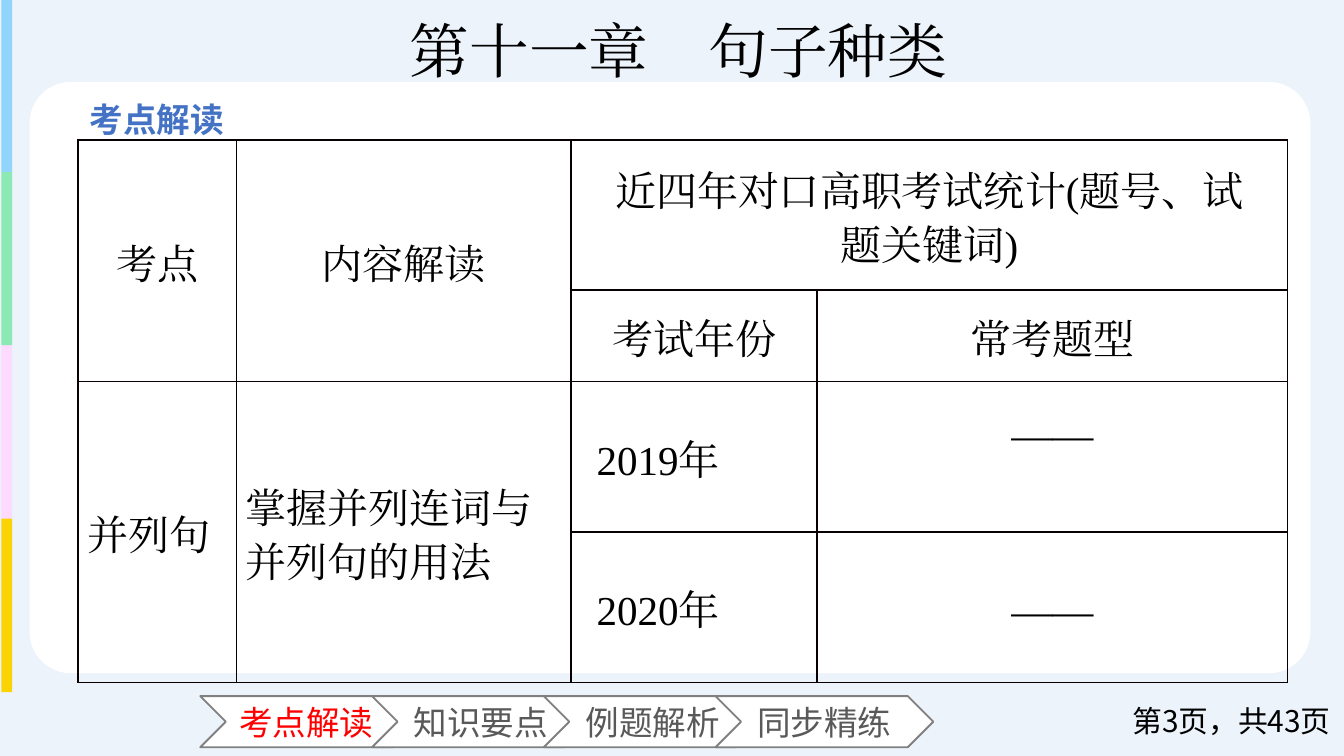
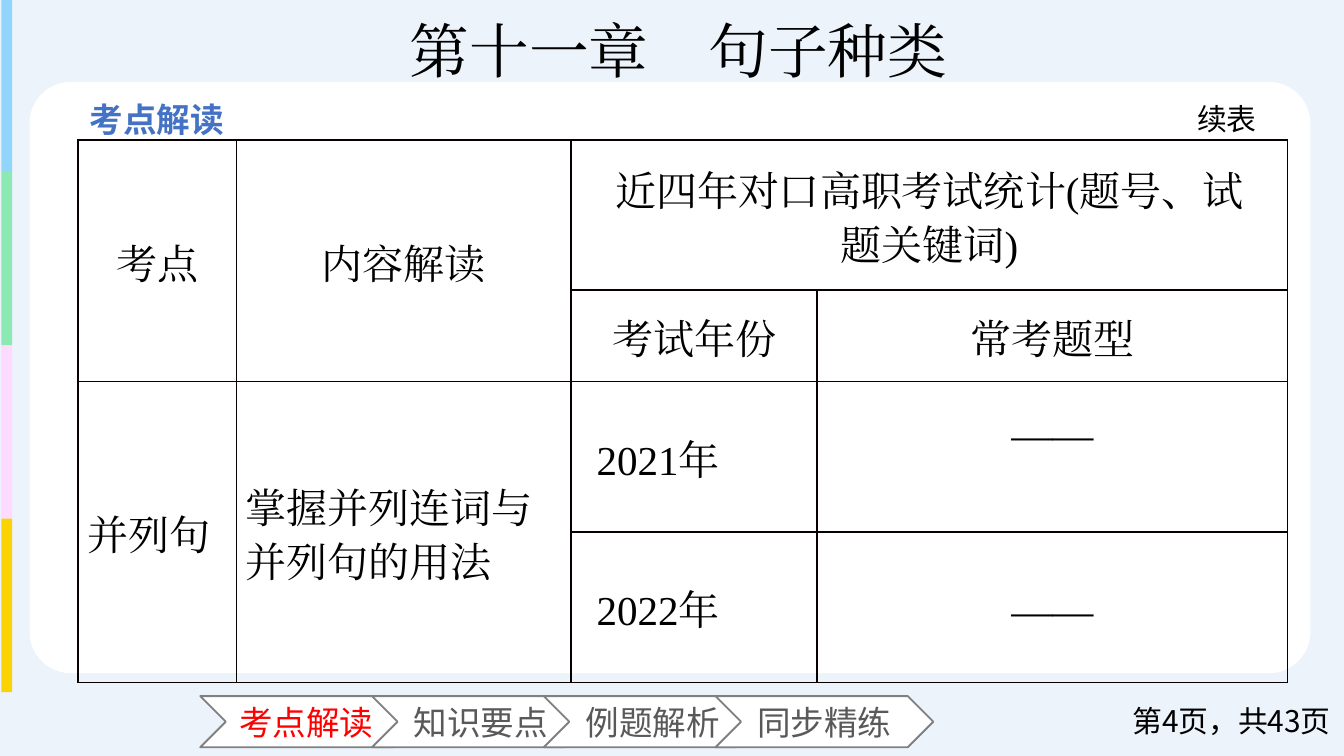
from lxml.etree import SubElement
from pptx import Presentation
from pptx.dml.color import RGBColor
from pptx.enum.shapes import MSO_SHAPE
from pptx.enum.text import MSO_ANCHOR, MSO_AUTO_SIZE, PP_ALIGN
from pptx.oxml.ns import qn
from pptx.util import Inches, Pt

COLORS = {
    "page": "ECF3FB", "card": "FFFFFF", "blue": "91D5FD", "green": "8CE9B4",
    "pink": "FEDAFE", "yellow": "FBD302", "heading": "4472C4", "outline": "808080",
    "active": "FF0000", "muted": "595959", "text": "000000", "border": "080000",
}
SANS = "Noto Sans CJK SC"
SERIF = "Times New Roman"
GRID = Inches(0.1)
SECTIONS = ["考点解读", "知识要点", "例题解析", "同步精练"]
PAGE_COUNT = 43
COLUMN_WIDTHS = [11.8, 24.9, 18.3, 35]
ROW_HEIGHTS = [11.2, 6.7, 11.2, 11.2]
WIDE_MARGINS = (1.9, 1.2, 1.9, 1.2)
NARROW_MARGINS = (0.7, 0, 0.7, 0)
RAISED_MARGINS = (1.9, 1.2, 1.9, 5)


def cells(*counts):
    return [round(count * GRID) for count in counts]


def color(name):
    return RGBColor.from_string(COLORS[name])


def add_text(frame, text, size, font=SANS, tint="text", align=None, bold=None, spacing=None):
    para = frame.paragraphs[0]
    para.alignment = align
    para.line_spacing = spacing
    span = para.add_run()
    span.text = text
    span.font.size = Pt(size)
    span.font.name = font
    span.font.bold = bold
    span.font.color.rgb = color(tint)
    SubElement(span.font._element, qn("a:ea"), typeface=font)


def add_block(shapes, kind, area, fill, outline=None):
    block = shapes.add_shape(kind, *cells(*area))
    block.shadow.inherit = False
    block.fill.solid()
    block.fill.fore_color.rgb = color(fill)
    if outline:
        block.line.color.rgb = color(outline)
        block.line.width = Pt(1)
    else:
        block.line.fill.background()
    return block


def add_label(page, area, text, size, anchor=MSO_ANCHOR.TOP, grow=False, **style):
    box = page.shapes.add_textbox(*cells(*area))
    frame = box.text_frame
    frame.word_wrap = True
    frame.vertical_anchor = anchor
    if grow:
        frame.auto_size = MSO_AUTO_SIZE.SHAPE_TO_FIT_TEXT
    add_text(frame, text, size, **style)


def add_side_bars(page):
    bars = page.shapes.add_group_shape()
    for index, fill in enumerate(["blue", "green", "pink", "yellow"]):
        add_block(bars.shapes, MSO_SHAPE.RECTANGLE,
                  (0.1, 12.9 * index - 0.1, 0.8, 12.9), fill)


def add_navigation(page, active):
    for index, section in enumerate(SECTIONS):
        step = add_block(page.shapes, MSO_SHAPE.CHEVRON,
                         (14.9 + 12.78 * index, 51.8, 16.2, 3.8), "card", "outline")
        step.text_frame.vertical_anchor = MSO_ANCHOR.MIDDLE
        chosen = section == active
        add_text(step.text_frame, section, 18,
                 tint="active" if chosen else "muted",
                 align=PP_ALIGN.JUSTIFY if chosen else PP_ALIGN.CENTER)


def add_frame(page, number):
    add_block(page.shapes, MSO_SHAPE.RECTANGLE, (0, 0, 100, 56.25), "page")
    add_side_bars(page)
    card = add_block(page.shapes, MSO_SHAPE.ROUNDED_RECTANGLE, (2.2, 6.1, 95.3, 44), "card")
    card.adjustments[0] = 0.07
    add_label(page, (5.7, 6.9, 18, 4), SECTIONS[0], 18, grow=True, tint="heading", bold=True)
    add_navigation(page, SECTIONS[0])
    add_label(page, (17.6, 0.5, 65.8, 6.4), "第十一章　句子种类", 32, grow=True,
              font=SERIF, align=PP_ALIGN.CENTER)
    add_label(page, (79.7, 52.1, 20.3, 3), f"第{number}页，共{PAGE_COUNT}页", 16,
              anchor=MSO_ANCHOR.MIDDLE, align=PP_ALIGN.RIGHT)


def add_borders(cell):
    properties = cell._tc.get_or_add_tcPr()
    for index, side in enumerate(["lnL", "lnR", "lnT", "lnB"]):
        line = properties.makeelement(qn(f"a:{side}"), {"w": str(Pt(1))})
        fill = SubElement(line, qn("a:solidFill"))
        SubElement(fill, qn("a:srgbClr"), val=COLORS["border"])
        properties.insert(index, line)


def fill_cell(cell, text, align=PP_ALIGN.CENTER, margins=WIDE_MARGINS):
    cell.vertical_anchor = MSO_ANCHOR.MIDDLE
    (cell.margin_left, cell.margin_top,
     cell.margin_right, cell.margin_bottom) = cells(*margins)
    add_text(cell.text_frame, text, 22, font=SERIF, align=align, spacing=1.2)


def add_exam_table(page, years):
    area = cells(5.8, 10.4, sum(COLUMN_WIDTHS), sum(ROW_HEIGHTS))
    table = page.shapes.add_table(len(ROW_HEIGHTS), len(COLUMN_WIDTHS), *area).table
    table.first_row = table.horz_banding = False
    for column, width in zip(table.columns, cells(*COLUMN_WIDTHS)):
        column.width = width
    for row, height in zip(table.rows, cells(*ROW_HEIGHTS)):
        row.height = height
    for cell in table.iter_cells():
        cell.fill.background()
        add_borders(cell)
    for top in (0, 2):
        for column in (0, 1):
            table.cell(top, column).merge(table.cell(top + 1, column))
    table.cell(0, 2).merge(table.cell(0, 3))

    fill_cell(table.cell(0, 0), "考点")
    fill_cell(table.cell(0, 1), "内容解读")
    fill_cell(table.cell(0, 2), "近四年对口高职考试统计(题号、试题关键词)")
    fill_cell(table.cell(1, 2), "考试年份")
    fill_cell(table.cell(1, 3), "常考题型")
    for column, text in enumerate(["并列句", "掌握并列连词与并列句的用法"]):
        fill_cell(table.cell(2, column), text, PP_ALIGN.LEFT, NARROW_MARGINS)
    for row, (year, margins) in enumerate(zip(years, [RAISED_MARGINS, WIDE_MARGINS]), 2):
        fill_cell(table.cell(row, 2), f"{year}年", PP_ALIGN.LEFT)
        fill_cell(table.cell(row, 3), "——", margins=margins)


def add_exam_page(deck, number, years, continued=False):
    page = deck.slides.add_slide(deck.slide_layouts[6])
    add_frame(page, number)
    if continued:
        add_label(page, (88.1, 7, 7.7, 2.7), "续表", 16)
    add_exam_table(page, years)


def main():
    deck = Presentation()
    deck.slide_width, deck.slide_height = cells(100, 56.25)
    add_exam_page(deck, 3, [2019, 2020])
    add_exam_page(deck, 4, [2021, 2022], continued=True)
    deck.save("out.pptx")


if __name__ == "__main__":
    main()
